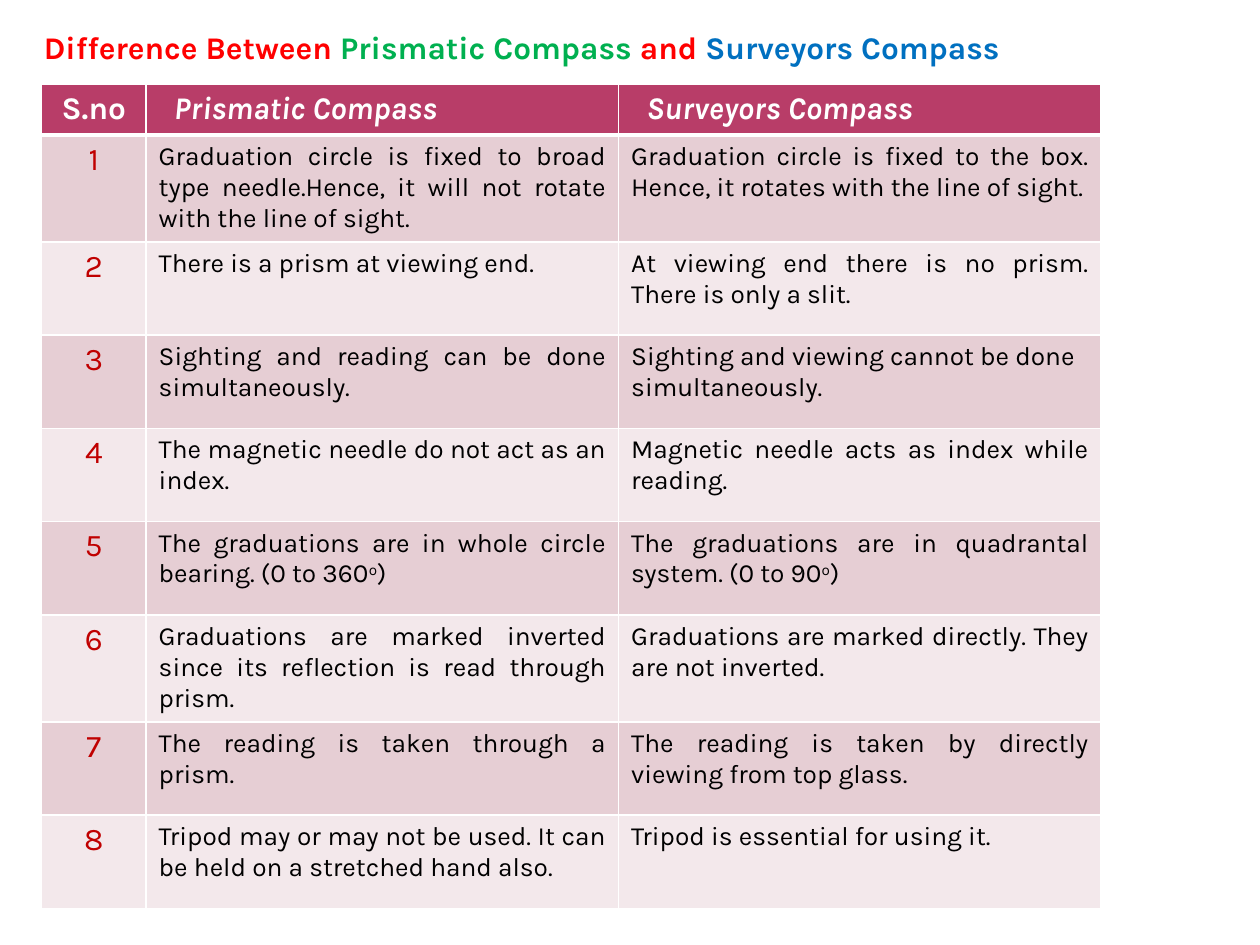
from pptx import Presentation
from pptx.dml.color import RGBColor
from pptx.enum.text import PP_ALIGN as Align
from pptx.oxml import parse_xml
from pptx.oxml.ns import nsdecls
from pptx.util import Inches, Pt

FONT = "Karla"
RED = RGBColor(0xFF, 0x00, 0x00)
GREEN = RGBColor(0x00, 0xB0, 0x50)
BLUE = RGBColor(0x00, 0x70, 0xC0)
WHITE = RGBColor(0xFF, 0xFF, 0xFF)
BLACK = RGBColor(0x00, 0x00, 0x00)
CRIMSON = RGBColor(0xC0, 0x00, 0x00)
ROSE = RGBColor(0xB8, 0x3D, 0x68)
BANDS = (RGBColor(0xE6, 0xCE, 0xD4), RGBColor(0xF3, 0xE8, 0xEB))

TITLE = [
    ("Difference Between ", RED),
    ("Prismatic Compass ", GREEN),
    ("and ", RED),
    ("Surveyors Compass", BLUE),
]
HEADINGS = [("S.no", 0.16, False), ("Prismatic Compass", 0.22, True), ("Surveyors Compass", 0.22, True)]
DIFFERENCES = [
    ("Graduation circle is fixed to broad type needle.Hence, it will not rotate with the line of sight.",
     "Graduation circle is fixed to the box. Hence, it rotates with the line of sight."),
    ("There is a prism at viewing end.",
     "At viewing end there is no prism. There is only a slit."),
    ("Sighting and reading can be done simultaneously.",
     "Sighting and viewing cannot be done\nsimultaneously."),
    ("The magnetic needle do not act as an index.",
     "Magnetic needle acts as index while reading."),
    ("The graduations are in whole circle bearing. (0 to 360^o^)",
     "The graduations are in quadrantal system. (0 to 90^o^)"),
    ("Graduations are marked inverted since its reflection is read through prism.",
     "Graduations are marked directly. They are not inverted."),
    ("The reading is taken through a prism.",
     "The reading is taken by directly viewing from top glass."),
    ("Tripod may or may not be used. It can be held on a stretched hand also.",
     "Tripod is essential for using it."),
]


class CompassSlide:
    """Hold the shared text style and the slide, with one method per kind of element."""

    def __init__(self, slide, font):
        self.slide = slide
        self.font = font

    def run(self, paragraph, text, size, color, bold=False, italic=False):
        run = paragraph.add_run()
        run.text = text
        run.font.name = self.font
        run.font.size = Pt(size)
        run.font.bold = bold
        run.font.italic = italic
        run.font.color.rgb = color
        return run

    def title(self, parts, left, top, width, height):
        frame = self.slide.shapes.add_textbox(
            Inches(left), Inches(top), Inches(width), Inches(height)).text_frame
        frame.word_wrap = True
        heading = frame.paragraphs[0]
        heading.alignment = Align.JUSTIFY
        for text, color in parts:
            self.run(heading, text, 18, color, bold=True)

    def table(self, left, top, widths, heights):
        table = self.slide.shapes.add_table(
            len(heights), len(widths), Inches(left), Inches(top),
            Inches(sum(widths)), Inches(sum(heights))).table
        for column, width in zip(table.columns, widths):
            column.width = Inches(width)
        for row, height in zip(table.rows, heights):
            row.height = Inches(height)
        return table

    def cell(self, cell, text, fill, size, color, align=Align.LEFT,
             bold=False, italic=False, top=1, bottom=1):
        properties = cell._tc.get_or_add_tcPr()
        for side, points in (("L", 1), ("R", 1), ("T", top), ("B", bottom)):
            properties.append(parse_xml(
                f'<a:ln{side} {nsdecls("a")} w="{Pt(points)}"><a:solidFill>'
                f'<a:srgbClr val="{WHITE}"/></a:solidFill></a:ln{side}>'))
        cell.fill.solid()
        cell.fill.fore_color.rgb = fill
        frame = cell.text_frame
        for index, line in enumerate(text.split("\n")):
            paragraph = frame.add_paragraph() if index else frame.paragraphs[0]
            paragraph.alignment = align
            for position, piece in enumerate(line.split("^")):
                run = self.run(paragraph, piece, size, color, bold, italic)
                if position % 2:
                    run.font._element.set("baseline", "30000")


def main():
    presentation = Presentation()
    presentation.slide_width = Inches(10)
    presentation.slide_height = Inches(7.5)
    page = CompassSlide(presentation.slides.add_slide(presentation.slide_layouts[6]), FONT)

    page.title(TITLE, 0.25, 0.17, 8.5, 7.17)
    comparison = page.table(0.33, 0.67, [0.83, 3.75, 3.83], [0.33] + [0.74] * len(DIFFERENCES))
    for column, (heading, inset, italic) in enumerate(HEADINGS):
        header = comparison.cell(0, column)
        header.margin_left = Inches(inset)
        page.cell(header, heading, ROSE, 18, WHITE, bold=True, italic=italic, bottom=3)
    for number, difference in enumerate(DIFFERENCES, 1):
        band = BANDS[(number - 1) % 2]
        top = 3 if number == 1 else 1
        page.cell(comparison.cell(number, 0), str(number), band, 18, CRIMSON, Align.CENTER, top=top)
        for column, statement in enumerate(difference, 1):
            page.cell(comparison.cell(number, column), statement, band, 15, BLACK, Align.JUSTIFY, top=top)

    presentation.save("out.pptx")


if __name__ == "__main__":
    main()
